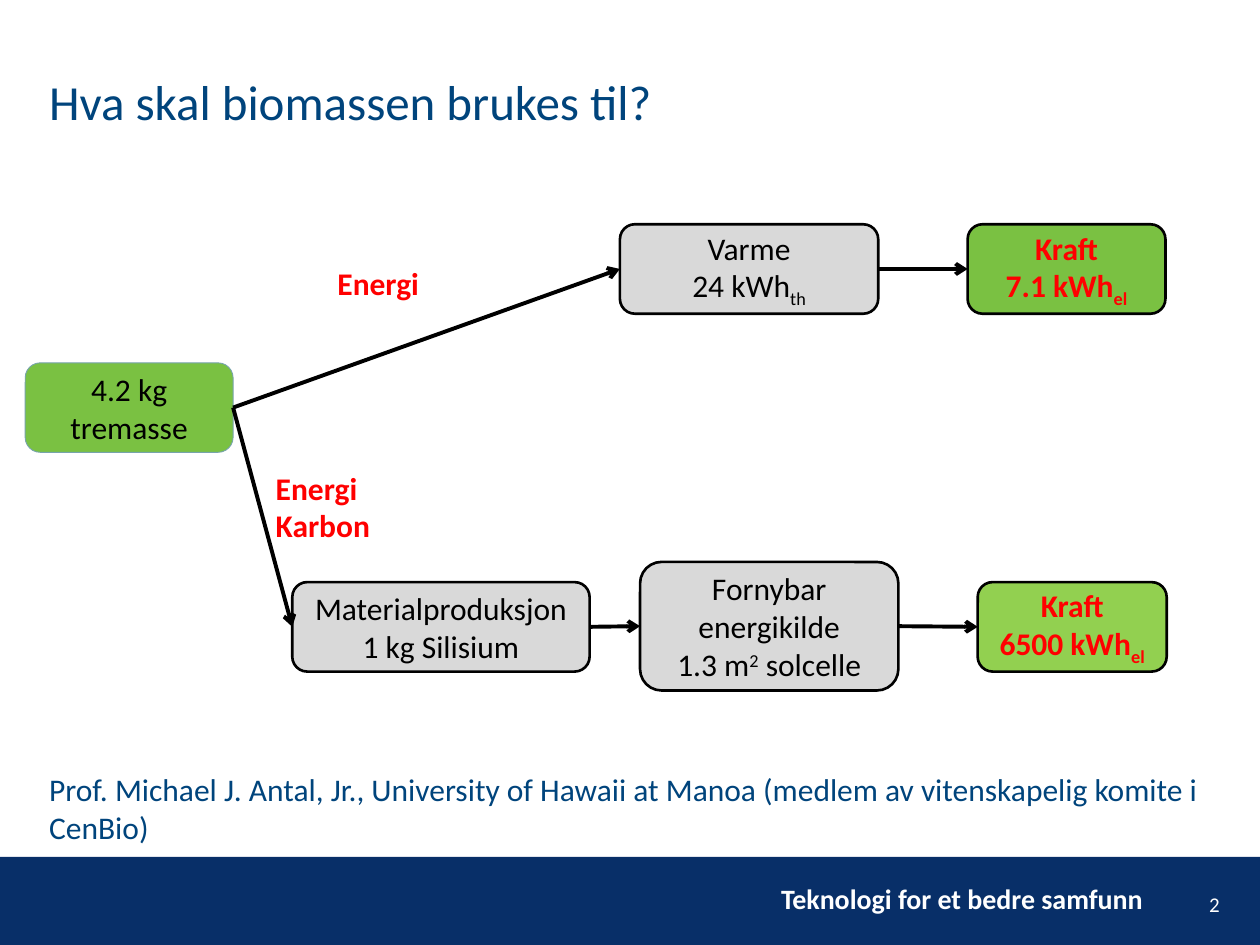
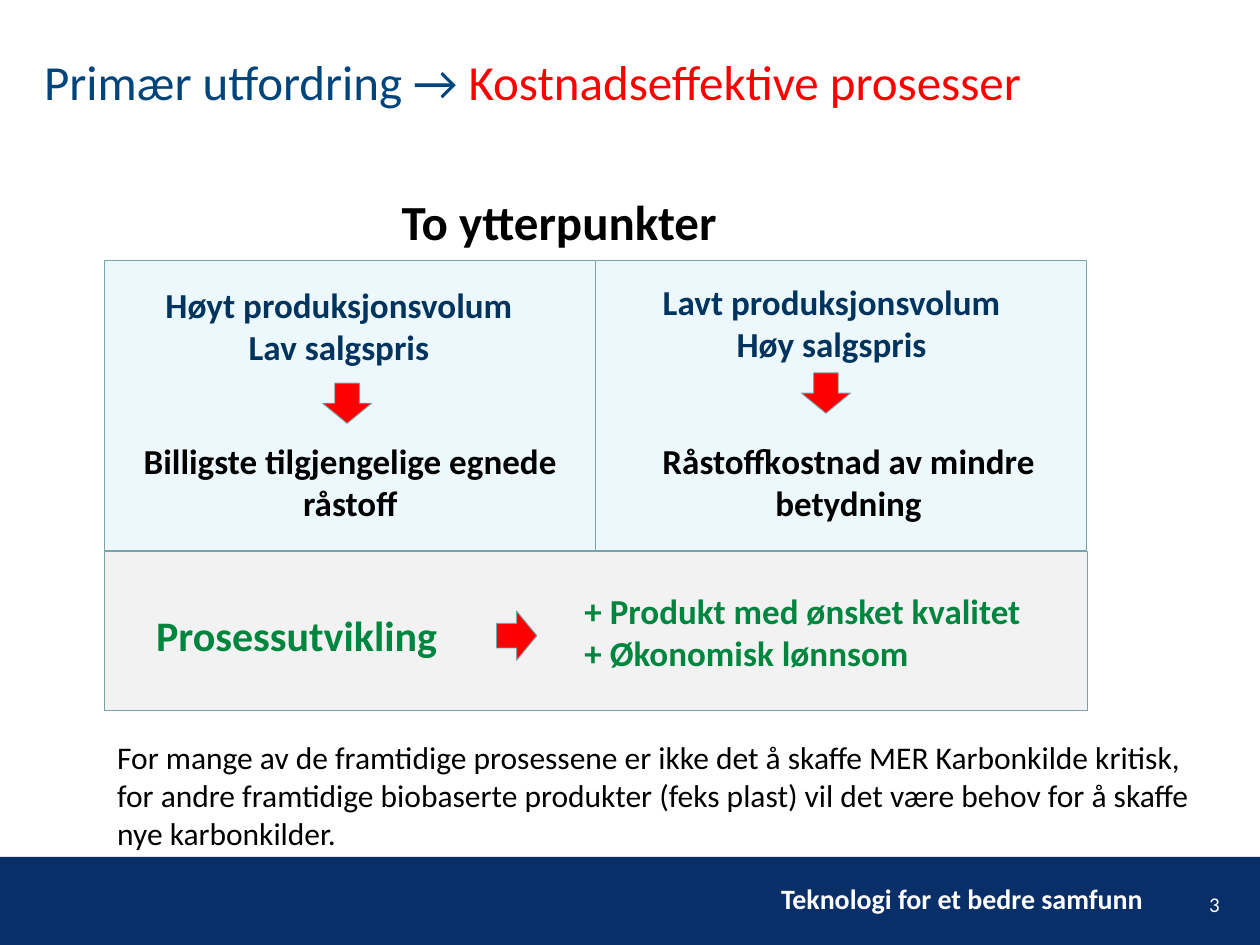
from dataclasses import dataclass

from lxml.etree import SubElement
from pptx import Presentation
from pptx.dml.color import RGBColor
from pptx.enum.shapes import MSO_CONNECTOR as Connector, MSO_SHAPE as Shape
from pptx.enum.text import MSO_ANCHOR as Anchor, MSO_AUTO_SIZE as AutoSize, PP_ALIGN as Align
from pptx.oxml.ns import qn
from pptx.util import Inches, Pt


@dataclass(frozen=True)
class Theme:
    font: str = "Calibri"
    # Colours
    band: str = "082F68"
    title: str = "00447C"
    heading: str = "00335D"
    text: str = "000000"
    light: str = "FFFFFF"
    accent: str = "FF0000"
    process: str = "00853F"
    green: str = "7AC142"
    lime: str = "92D050"
    grey: str = "D9D9D9"
    pale_blue: str = "ECF8FB"
    pale_grey: str = "F2F2F2"
    edge: str = "77A4AC"
    # Type sizes
    title_size: int = 28
    lead_size: int = 24
    point_size: int = 20
    body_size: int = 18
    footer_size: int = 16
    number_size: int = 12


@dataclass(frozen=True)
class Span:
    text: str
    color: str = ""
    baseline: int = 0


THEME = Theme()
WIDTH, HEIGHT = Inches(10), Inches(7.5)
COLUMNS, ROWS = 100, 75
FIRST_NUMBER = 2
LEFT_SIDE, RIGHT_SIDE = 1, 3  # connection sites of a box
SUB, SUPER = -25000, 30000


# Grid
def cells(left, top, width, height):
    column, row = WIDTH / COLUMNS, HEIGHT / ROWS
    return [round(n) for n in (left * column, top * row, width * column, height * row)]


def move(box, area):
    box.left, box.top, box.width, box.height = cells(*area)


# Text
def style(para, size, color, bold=False, align=Align.LEFT):
    para.alignment = align
    para.space_before = Pt(0)
    font = para.font
    font.name, font.size, font.bold = THEME.font, Pt(size), bold
    font.color.rgb = RGBColor.from_string(color)


def write(box, lines, size=THEME.body_size, color=THEME.text, bold=False, align=Align.LEFT):
    """Fill a box; each line is a string or a list of spans."""
    frame = box.text_frame
    frame.word_wrap = True
    for index, line in enumerate(lines):
        para = frame.paragraphs[0] if index == 0 else frame.add_paragraph()
        for span in [Span(line)] if isinstance(line, str) else line:
            run = para.add_run()
            run.text = span.text
            if span.color:
                run.font.color.rgb = RGBColor.from_string(span.color)
            if span.baseline:
                run._r.get_or_add_rPr().set("baseline", str(span.baseline))
        style(para, size, color, bold, align)


def add_label(page, area, lines, **look):
    box = page.shapes.add_textbox(*cells(*area))
    write(box, lines, **look)
    return box


def fill_placeholder(box, area, line, **look):
    move(box, area)
    frame = box.text_frame
    frame.auto_size = AutoSize.NONE
    frame.vertical_anchor = Anchor.TOP
    props = frame.paragraphs[0]._p.get_or_add_pPr()
    props.set("marL", "0")
    props.set("indent", "0")
    SubElement(props, qn("a:buNone"))
    write(box, [line], **look)


def add_title(page, left, top, line):
    page.shapes.title.text_frame.margin_left = 0
    fill_placeholder(page.shapes.title, (left, top, 92.2, 7), line,
                     size=THEME.title_size, color=THEME.title)


# Shapes
def add_block(page, kind, area, fill, edge=THEME.edge, weight=0.5):
    block = page.shapes.add_shape(kind, *cells(*area))
    block.shadow.inherit = False
    block.fill.solid()
    block.fill.fore_color.rgb = RGBColor.from_string(fill)
    if edge:
        block.line.color.rgb = RGBColor.from_string(edge)
        block.line.width = Pt(weight)
    else:
        block.line.fill.background()
    return block


def add_step(page, area, lines, fill=THEME.grey, edge=THEME.text, weight=1.5, **look):
    step = add_block(page, Shape.ROUNDED_RECTANGLE, area, fill, edge, weight)
    step.text_frame.vertical_anchor = Anchor.MIDDLE
    write(step, lines, align=Align.CENTER, **look)
    return step


def add_arrow(page, source, target):
    arrow = page.shapes.add_connector(Connector.STRAIGHT, 0, 0, 0, 0)
    arrow.begin_connect(source, RIGHT_SIDE)
    arrow.end_connect(target, LEFT_SIDE)
    arrow.line.color.rgb = RGBColor.from_string(THEME.text)
    arrow.line.width = Pt(2.25)
    SubElement(arrow.line._get_or_add_ln(), qn("a:tailEnd"), type="arrow")
    SubElement(arrow.element.spPr, qn("a:effectLst"))


# Shared band and page number
def add_band(page):
    """Draw the footer band and hand it over to the layout."""
    band = add_block(page, Shape.RECTANGLE, (0, 68, 100, 7), THEME.band, edge="")
    slogan = add_label(page, (48.4, 69.5, 43.3, 3.7), ["Teknologi for et bedre samfunn"],
                       size=THEME.footer_size, color=THEME.light, bold=True, align=Align.RIGHT)
    for number, part in enumerate((band, slogan), 101):
        part.element.nvSpPr.cNvPr.set("id", str(number))
        page.slide_layout.shapes.element.append(part.element)


def add_number(page, number):
    box = page.shapes.add_textbox(*cells(92.2, 70.2, 5.6, 3.1))
    box.text_frame.vertical_anchor = Anchor.MIDDLE
    para = box.text_frame.paragraphs[0]
    field = SubElement(para._p, qn("a:fld"), type="slidenum",
                       id="{B6F15528-21DE-4FAA-801E-634DDDAF4B2B}")
    SubElement(field, qn("a:rPr"), lang="nb-NO")
    SubElement(field, qn("a:t")).text = str(number)
    style(para, THEME.number_size, THEME.light, align=Align.RIGHT)


# Slides
def build_uses(page):
    add_title(page, 3.9, 5.2, "Hva skal biomassen brukes til?")
    credit = page.placeholders[1]
    credit.text_frame.margin_left = 0
    fill_placeholder(credit, (3.9, 60.6, 92.2, 6.9),
                     "Prof. Michael J. Antal, Jr., University of Hawaii at Manoa "
                     "(medlem av vitenskapelig komite i CenBio)", color=THEME.title)

    # Two routes from wood to power
    power = dict(color=THEME.accent, bold=True)
    wood = add_step(page, (2, 28.8, 16.5, 7.1), ["4.2 kg", "tremasse"],
                    fill=THEME.green, edge=THEME.edge, weight=0.5)
    heat = add_step(page, (49.2, 17.8, 20.5, 7.1),
                    ["Varme", [Span("24 kWh"), Span("th", baseline=SUB)]])
    heat_power = add_step(page, (76.8, 17.8, 15.7, 7.1),
                          ["Kraft", [Span("7.1 kWh"), Span("el", baseline=SUB)]],
                          fill=THEME.green, **power)
    silicon = add_step(page, (23.2, 46.2, 23.6, 7.1), ["Materialproduksjon", "1 kg Silisium"])
    solar = add_step(page, (50.8, 44.6, 20.5, 10.2),
                     ["Fornybar energikilde",
                      [Span("1.3 m"), Span("2", baseline=SUPER), Span(" solcelle")]])
    solar_power = add_step(page, (77.6, 46.2, 15, 7.1),
                           ["Kraft", [Span("6500 kWh"), Span("el", baseline=SUB)]],
                           fill=THEME.lime, **power)
    for route in ((wood, heat, heat_power), (wood, silicon, solar, solar_power)):
        for source, target in zip(route, route[1:]):
            add_arrow(page, source, target)

    add_label(page, (25.8, 20.5, 10, 4), ["Energi"], **power)
    add_label(page, (20.9, 36.7, 11, 7.1), ["Energi", "Karbon"], **power)


def build_challenge(page):
    add_title(page, 3.5, 3.6, [Span("Primær utfordring → "),
                               Span("Kostnadseffektive prosesser", color=THEME.accent)])
    fill_placeholder(page.placeholders[1], (8.3, 58.1, 87.4, 10.1),
                     "For mange av de framtidige prosessene er ikke det å skaffe MER Karbonkilde "
                     "kritisk, for andre framtidige biobaserte produkter (feks plast) vil det være "
                     "behov for å skaffe nye karbonkilder.", color=THEME.text)

    # Panels
    for area, fill in (((47.2, 20.7, 39, 23), THEME.pale_blue),
                       ((8.3, 20.7, 39, 23), THEME.pale_blue),
                       ((8.3, 43.8, 78, 12.6), THEME.pale_grey)):
        add_block(page, Shape.RECTANGLE, area, fill)
    add_label(page, (30.9, 14.7, 28, 5.7), ["To ytterpunkter"],
              size=THEME.title_size, bold=True)

    # The two extremes
    point = dict(size=THEME.point_size, bold=True)
    extremes = (
        ((8.3, 22, 37.2, 7.7), ["Høyt produksjonsvolum", "Lav salgspris"], (25.6, 30.4),
         (10.1, 34.4, 35.4, 7.7), "Billigste tilgjengelige egnede råstoff"),
        ((45.7, 21.8, 40.6, 7.7), ["Lavt produksjonsvolum", "Høy salgspris"], (63.6, 29.6),
         (50.8, 34.4, 33.1, 7.7), "Råstoffkostnad av mindre betydning"),
    )
    for market_area, market, corner, outcome_area, outcome in extremes:
        add_label(page, market_area, market, color=THEME.heading, align=Align.CENTER, **point)
        add_block(page, Shape.DOWN_ARROW, (*corner, 3.9, 3.2), THEME.accent)
        add_label(page, outcome_area, [outcome], align=Align.CENTER, **point)

    # Process development
    add_label(page, (11.4, 47.9, 25.5, 5), ["Prosessutvikling"],
              size=THEME.lead_size, color=THEME.process, bold=True)
    add_block(page, Shape.RIGHT_ARROW, (39.4, 48.5, 3.2, 3.9), THEME.accent)
    add_label(page, (45.4, 46.3, 38.5, 7.7),
              ["+ Produkt med ønsket kvalitet", "+ Økonomisk lønnsom"],
              color=THEME.process, **point)


def main():
    deck = Presentation()
    deck.slide_width, deck.slide_height = WIDTH, HEIGHT
    deck.element.set("firstSlideNum", str(FIRST_NUMBER))
    layout = deck.slide_layouts[1]
    for number, build in enumerate((build_uses, build_challenge), FIRST_NUMBER):
        page = deck.slides.add_slide(layout)
        if number == FIRST_NUMBER:
            add_band(page)
        build(page)
        add_number(page, number)
    deck.save("out.pptx")


if __name__ == "__main__":
    main()
